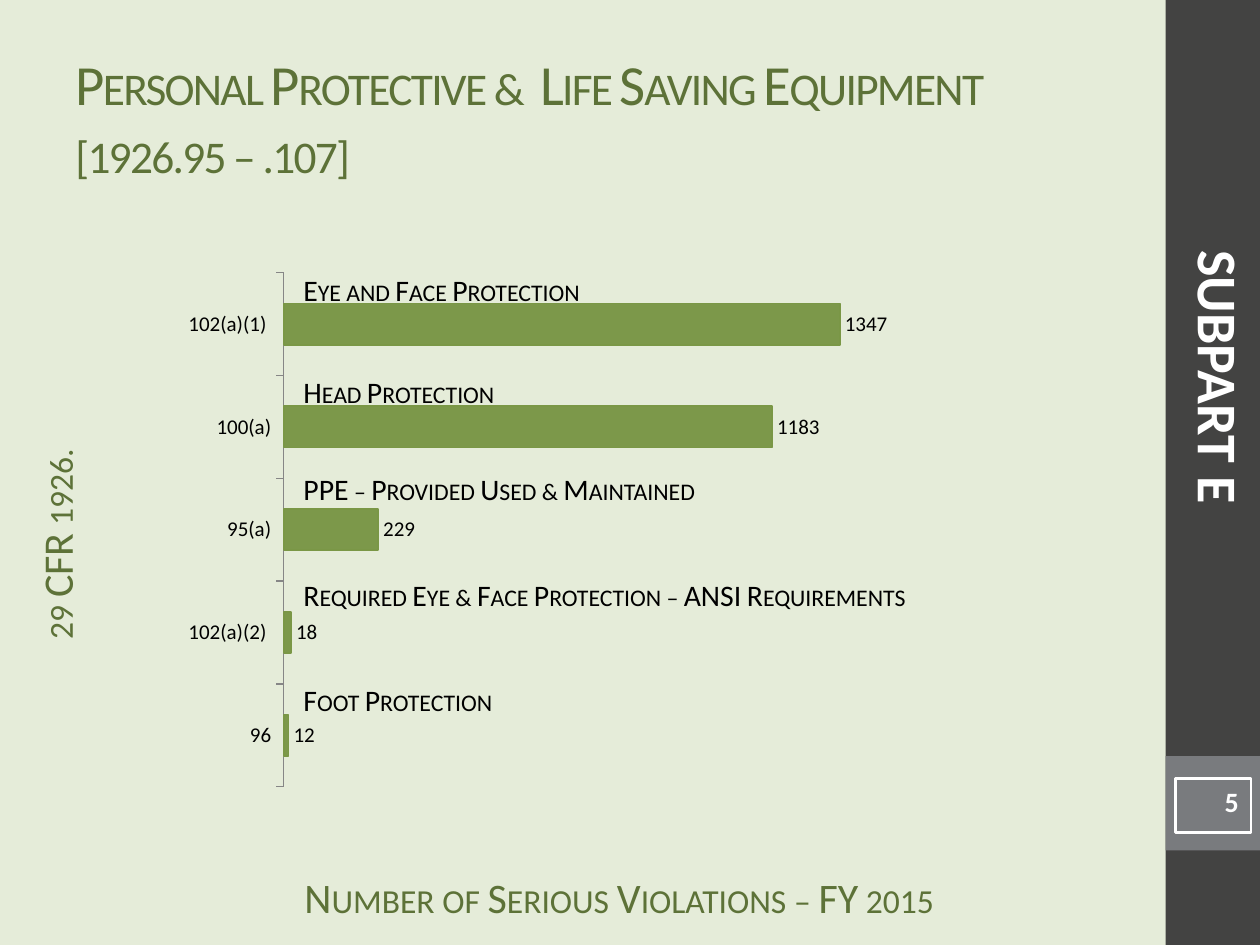
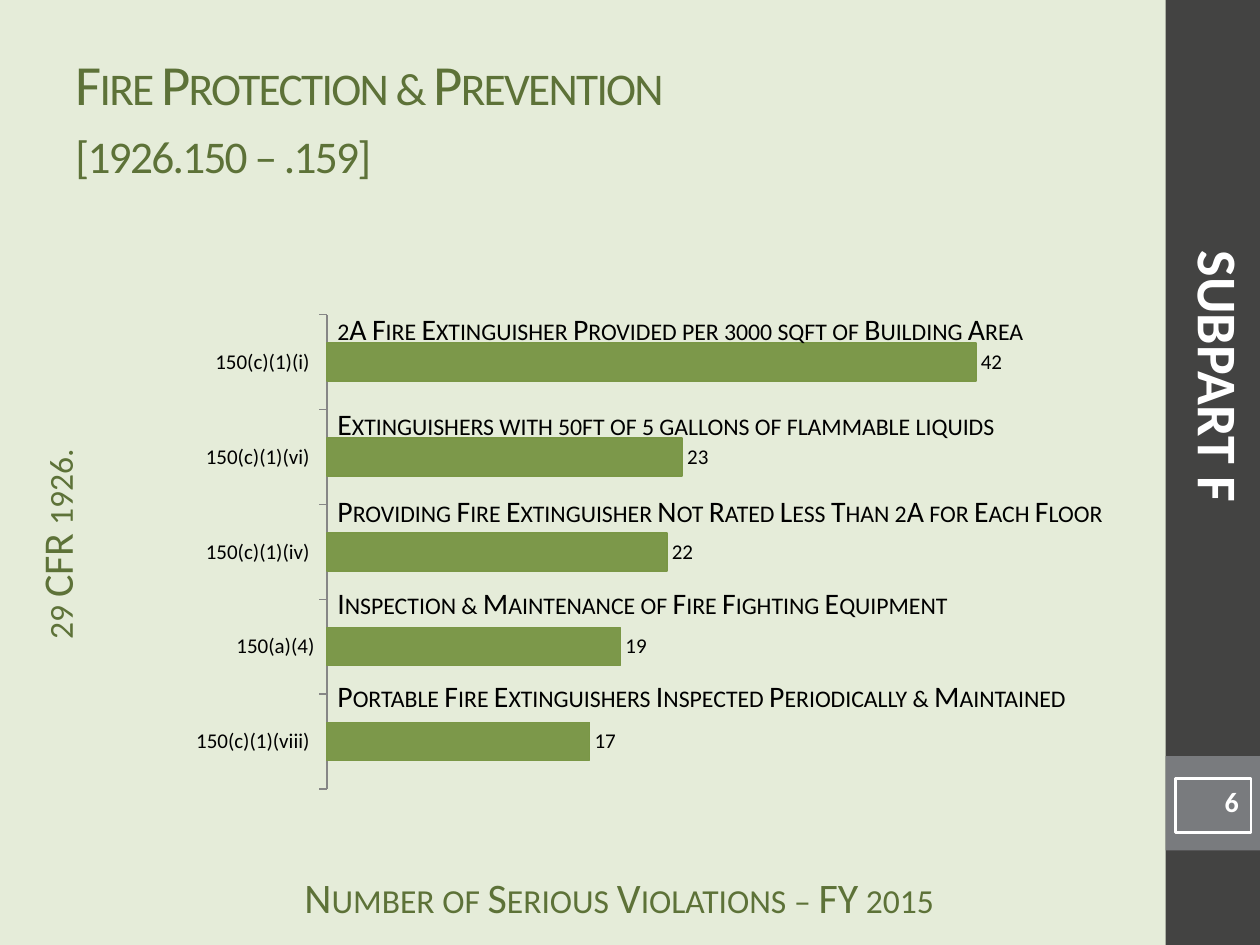
import pptx
import pptx.util
import pptx.dml.color
import pptx.chart.data
import pptx.enum.chart
import pptx.enum.shapes
import pptx.enum.text
import pptx.oxml

from dataclasses import dataclass

Inches = pptx.util.Inches
Pt = pptx.util.Pt
Align = pptx.enum.text.PP_ALIGN
Anchor = pptx.enum.text.MSO_ANCHOR


@dataclass(frozen=True)
class Theme:
    font: str = "Calibri"
    background: str = "E5ECD9"
    heading: str = "5D7238"
    ink: str = "000000"
    white: str = "FFFFFF"
    side_band: str = "434342"
    number_band: str = "797B7E"
    bar: str = "7C984A"
    bar_edge: str = "7A9746"
    axis: str = "868686"
    title_size: float = 32.4
    subpart_size: float = 32
    caption_size: float = 24
    label_size: float = 17
    number_size: float = 16
    chart_size: float = 12


THEME = Theme()

# Each violation: section, count, description, top of the description.
SUBPARTS = [
    dict(
        title="Personal Protective &  Life Saving Equipment [1926.95 – .107]",
        subpart="SUBPART E",
        number="5",
        chart_box=(1.37, 2.08, 6.25, 4.25),
        axis_maximum=1600,
        label_left=2.31,
        violations=[
            ("102(a)(1) ", 1347, "Eye and Face Protection", 2.11),
            ("100(a)", 1183, "Head Protection", 2.92),
            ("95(a)", 229, "PPE – Provided Used & Maintained", 3.69),
            ("102(a)(2) ", 18, "Required Eye & Face Protection – ANSI Requirements", 4.53),
            ("96", 12, "Foot Protection", 5.36),
        ],
    ),
    dict(
        title="Fire Protection & Prevention\n[1926.150 – .159]",
        subpart="SUBPART F",
        number="6",
        chart_box=(1.42, 2.42, 6.83, 3.92),
        axis_maximum=45,
        label_left=2.58,
        violations=[
            ("150(c)(1)(i) ", 42,
             "2A Fire Extinguisher Provided per 3000 sqft of Building Area", 2.42),
            ("150(c)(1)(vi) ", 23,
             "Extinguishers with 50ft of 5 gallons of flammable liquids", 3.17),
            ("150(c)(1)(iv) ", 22,
             "Providing Fire Extinguisher Not Rated Less Than 2A for Each Floor", 3.86),
            ("150(a)(4)", 19,
             "Inspection & Maintenance of Fire Fighting Equipment", 4.59),
            ("150(c)(1)(viii) ", 17,
             "Portable Fire Extinguishers Inspected Periodically & Maintained", 5.33),
        ],
    ),
]


def rgb(color):
    return pptx.dml.color.RGBColor.from_string(color)


def write_text(shape, text, size, color, bold=False, small_caps=False,
               spacing=None, align=Align.LEFT, anchor=Anchor.TOP, insets=None):
    """Fill a shape with one formatted paragraph; spacing is in points."""
    frame = shape.text_frame
    frame.word_wrap = True
    frame.vertical_anchor = anchor
    if insets:
        (frame.margin_left, frame.margin_top,
         frame.margin_right, frame.margin_bottom) = map(Inches, insets)
    paragraph = frame.paragraphs[0]
    paragraph.text = text
    paragraph.alignment = align
    for run in paragraph.runs:
        run.font.name = THEME.font
        run.font.size = Pt(size)
        run.font.bold = bold
        run.font.color.rgb = rgb(color)
        properties = run.font._element
        if small_caps:
            properties.set("cap", "small")
        if spacing is not None:
            properties.set("spc", str(int(spacing * 100)))


def add_text(slide, box, text, size, color, rotation=0, **text_format):
    text_box = slide.shapes.add_textbox(*map(Inches, box))
    text_box.rotation = rotation
    write_text(text_box, text, size, color, **text_format)


def add_rectangle(slide, box, fill=None, line=None):
    rectangle = slide.shapes.add_shape(
        pptx.enum.shapes.MSO_SHAPE.RECTANGLE, *map(Inches, box))
    rectangle.shadow.inherit = False
    if fill:
        rectangle.fill.solid()
        rectangle.fill.fore_color.rgb = rgb(fill)
    else:
        rectangle.fill.background()
    if line:
        rectangle.line.color.rgb = rgb(line)
        rectangle.line.width = Pt(1.5)
    else:
        rectangle.line.fill.background()
    return rectangle


def add_frame(slide, title, subpart, number):
    """Add the side bands, captions, title and slide number."""
    add_rectangle(slide, (9.25, 0, 0.75, 7.5), fill=THEME.side_band)
    add_rectangle(slide, (9.25, 6, 0.75, 0.75), fill=THEME.number_band)
    caption = dict(size=THEME.caption_size, color=THEME.heading, small_caps=True,
                   align=Align.CENTER, insets=(0.1, 0, 0.1, 0.05))
    add_text(slide, (2.08, 6.92, 5.67, 0.33),
             "Number of Serious Violations – FY 2015", **caption)
    add_text(slide, (-1.56, 4.03, 4.19, 0.58), "29 CFR 1926.",
             rotation=270, **caption)
    add_text(slide, (0.5, 0.3, 8.33, 1.25), title, THEME.title_size,
             THEME.heading, small_caps=True, spacing=-1, anchor=Anchor.MIDDLE)
    add_text(slide, (6.69, 2.67, 5.98, 0.64), subpart, THEME.subpart_size,
             THEME.white, rotation=90, bold=True, align=Align.CENTER)
    number_box = add_rectangle(slide, (9.33, 6.18, 0.6, 0.43), line=THEME.white)
    write_text(number_box, number, THEME.number_size, THEME.white,
               bold=True, align=Align.RIGHT)


def add_violation_chart(slide, box, violations, axis_maximum):
    bottom_up = violations[::-1]
    data = pptx.chart.data.CategoryChartData()
    data.categories = [section for section, *_ in bottom_up]
    data.add_series("Series 1", [count for _, count, *_ in bottom_up])
    chart = slide.shapes.add_chart(
        pptx.enum.chart.XL_CHART_TYPE.BAR_CLUSTERED,
        *map(Inches, box), data).chart
    chart.has_legend = False
    chart.has_title = False
    chart.font.name = THEME.font
    chart.font.size = Pt(THEME.chart_size)
    chart.font.color.rgb = rgb(THEME.ink)

    sections = chart.category_axis
    sections.major_tick_mark = pptx.enum.chart.XL_TICK_MARK.OUTSIDE
    sections.format.line.color.rgb = rgb(THEME.axis)
    sections.has_major_gridlines = False
    counts = chart.value_axis
    counts.has_major_gridlines = False
    counts.minimum_scale = 0
    counts.maximum_scale = axis_maximum
    counts.visible = False

    plot = chart.plots[0]
    plot.vary_by_categories = False
    plot.gap_width = 150
    plot.has_data_labels = True
    plot.data_labels.show_value = True
    plot.data_labels.position = pptx.enum.chart.XL_LABEL_POSITION.OUTSIDE_END
    plot.data_labels.font.size = Pt(THEME.chart_size)
    bars = plot.series[0].format
    bars.fill.solid()
    bars.fill.fore_color.rgb = rgb(THEME.bar)
    bars.line.color.rgb = rgb(THEME.bar_edge)
    bars.line.width = Pt(1)


def add_descriptions(slide, left, violations):
    for _, _, description, top in violations:
        add_text(slide, (left, top, 6.6, 0.39), description,
                 THEME.label_size, THEME.ink, small_caps=True)


def main():
    deck = pptx.Presentation()
    deck.slide_width, deck.slide_height = Inches(10), Inches(7.5)
    background = deck.slide_master.background.fill
    background.solid()
    background.fore_color.rgb = rgb(THEME.background)
    for content in SUBPARTS:
        slide = deck.slides.add_slide(deck.slide_layouts[6])
        add_frame(slide, content["title"], content["subpart"], content["number"])
        add_violation_chart(slide, content["chart_box"], content["violations"],
                            content["axis_maximum"])
        add_descriptions(slide, content["label_left"], content["violations"])
    deck.save("out.pptx")


if __name__ == "__main__":
    main()
